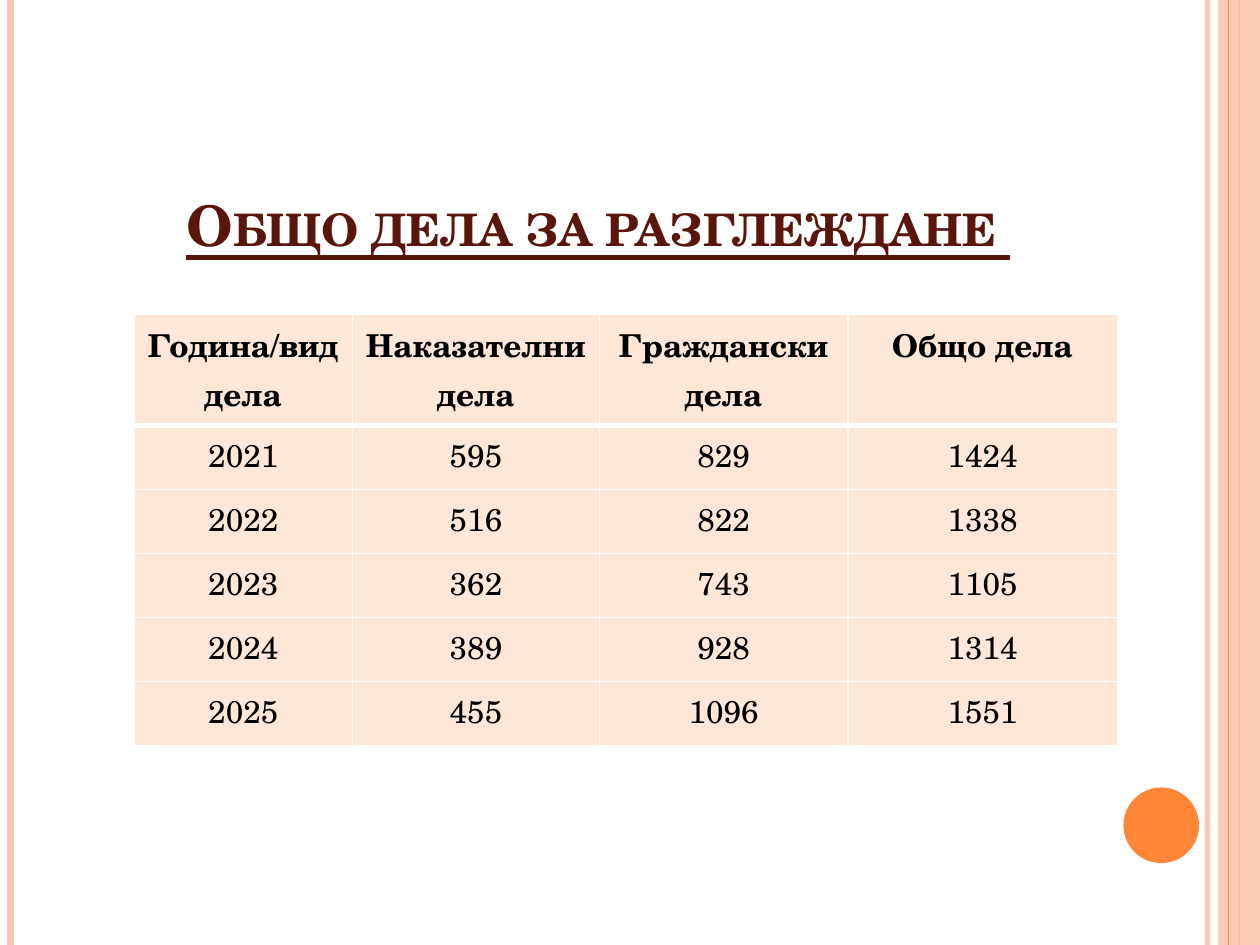
from lxml import etree
from pptx import Presentation
from pptx.dml.color import RGBColor
from pptx.enum.shapes import MSO_CONNECTOR, MSO_SHAPE
from pptx.enum.text import MSO_ANCHOR, PP_ALIGN
from pptx.oxml.ns import qn
from pptx.util import Pt

FONT = "TeX Gyre Schola"
PINK, ORANGE, BROWN = "FEC3AE", "FE8637", "5A160B"
CREAM, WHITE, BLACK = "FFE7D7", "FFFFFF", "000000"
PAGE_WIDTH, PAGE_HEIGHT = 720, 540

TITLE = "Общо дела за разглеждане "
HEADER = ["Година/вид дела", "Наказателни дела", "Граждански дела", "Общо дела"]
CASES = [
    (2021, 595, 829, 1424),
    (2022, 516, 822, 1338),
    (2023, 362, 743, 1105),
    (2024, 389, 928, 1314),
    (2025, 455, 1096, 1551),
]
COLUMN_WIDTHS = [125, 141, 142, 154]
HEADER_HEIGHT, ROW_HEIGHT = 63.5, 36.6

# x, colour, width, opacity in percent
BACK_STRIPES = [(690, PINK, 3, 93), (6, PINK, 4.5, 100), (708, ORANGE, 1.5, 100)]
FRONT_STRIPES = [(702, ORANGE, 0.75, 100)]


def rgb(value):
    return RGBColor.from_string(value)


def set_opacity(element, percent):
    color = element.find(".//" + qn("a:srgbClr"))
    etree.SubElement(color, qn("a:alpha"), val=str(percent * 1000))


def add_stripes(page, stripes):
    for x, color, width, opacity in stripes:
        stripe = page.shapes.add_connector(
            MSO_CONNECTOR.STRAIGHT, Pt(x), Pt(0), Pt(x), Pt(PAGE_HEIGHT))
        stripe.line.color.rgb = rgb(color)
        stripe.line.width = Pt(width)
        properties = stripe._element.spPr
        if opacity < 100:
            set_opacity(properties, opacity)
        etree.SubElement(properties, qn("a:effectLst"))


def add_plain_shape(page, kind, left, top, width, height, color):
    shape = page.shapes.add_shape(kind, Pt(left), Pt(top), Pt(width), Pt(height))
    shape.shadow.inherit = False
    shape.fill.solid()
    shape.fill.fore_color.rgb = rgb(color)
    shape.line.fill.background()
    return shape


def write(frame, text, size=18, color=BLACK, bold=False, underline=False,
          small_caps=False, align=PP_ALIGN.LEFT):
    para = frame.paragraphs[0]
    para.alignment = align
    span = para.add_run()
    span.text = text
    font = span.font
    font.name, font.size, font.bold = FONT, Pt(size), bold
    font.underline = underline
    font.color.rgb = rgb(color)
    if small_caps:
        span._r.get_or_add_rPr().set("cap", "small")


def set_borders(cell, **widths):
    """Draw white borders; the keywords are lnL, lnR, lnT and lnB, in points."""
    properties = cell._tc.get_or_add_tcPr()
    for position, (side, width) in enumerate(widths.items()):
        border = etree.Element(qn("a:" + side), w=str(Pt(width)))
        fill = etree.SubElement(border, qn("a:solidFill"))
        etree.SubElement(fill, qn("a:srgbClr"), val=WHITE)
        properties.insert(position, border)


def add_case_table(page, left, top):
    rows = [HEADER] + CASES
    heights = [HEADER_HEIGHT] + [ROW_HEIGHT] * len(CASES)
    table = page.shapes.add_table(
        len(rows), len(HEADER), Pt(left), Pt(top),
        Pt(sum(COLUMN_WIDTHS)), Pt(sum(heights))).table
    for column, width in zip(table.columns, COLUMN_WIDTHS):
        column.width = Pt(width)
    for index, (values, height) in enumerate(zip(rows, heights)):
        table.rows[index].height = Pt(height)
        for cell, value in zip(table.rows[index].cells, values):
            cell.fill.solid()
            cell.fill.fore_color.rgb = rgb(CREAM)
            write(cell.text_frame, str(value), bold=index == 0, align=PP_ALIGN.CENTER)
            set_borders(cell, lnL=1, lnR=1, lnT=3 if index == 1 else 1,
                        lnB=3 if index == 0 else 1)


deck = Presentation()
deck.slide_width, deck.slide_height = Pt(PAGE_WIDTH), Pt(PAGE_HEIGHT)
page = deck.slides.add_slide(deck.slide_layouts[6])

add_stripes(page, BACK_STRIPES)
band = add_plain_shape(page, MSO_SHAPE.RECTANGLE, 696, 0, 24, PAGE_HEIGHT, PINK)
set_opacity(band._element.spPr, 87)
add_stripes(page, FRONT_STRIPES)
add_plain_shape(page, MSO_SHAPE.OVAL, 642, 450, 43.2, 43.2, ORANGE)

title = page.shapes.add_textbox(Pt(99.5), Pt(66), Pt(504.5), Pt(85))
title.text_frame.word_wrap = True
title.text_frame.vertical_anchor = MSO_ANCHOR.BOTTOM
write(title.text_frame, TITLE, size=32, color=BROWN, bold=True,
      underline=True, small_caps=True)

add_case_table(page, 76.5, 179.5)

deck.save("out.pptx")
